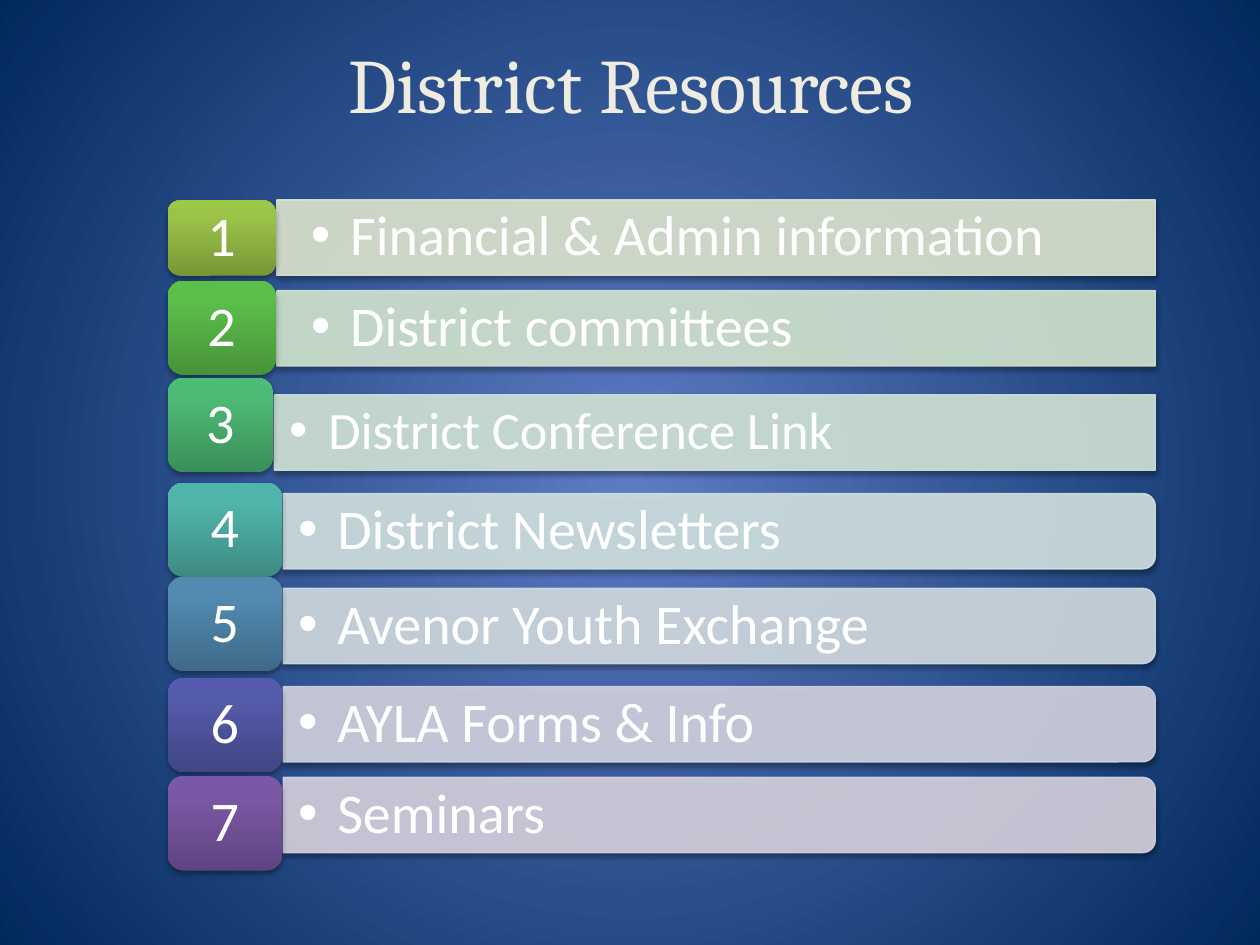
from copy import deepcopy

from lxml import etree
from pptx import Presentation
from pptx.dml.color import RGBColor as RGB
from pptx.enum.shapes import MSO_SHAPE as SHAPE
from pptx.enum.text import MSO_ANCHOR as ANCHOR, PP_ALIGN as ALIGN
from pptx.oxml.ns import qn
from pptx.util import Cm, Pt

COLORS = {
    "title": "EEECE1",
    "text": "FFFFFF",
    "shadow": "000000",
    "glow": "5E7CC5",
    "edge": "00295C",
    "bars": ["DEE7D1", "D3E6D2", "D2E5D9", "D2E3E2", "D2DCE2", "D3D4E1", "D8D3E0"],
    "tiles": [
        ("779737", "9BC348", "9DC746"),
        ("479339", "5CBF4A", "5BC249"),
        ("3B8F5A", "4DBA75", "4BBD75"),
        ("3D8B83", "50B5AA", "4EB8AC"),
        ("3F6A88", "528AB0", "518BB3"),
        ("414684", "555BAB", "545AAE"),
        ("5F4480", "7B58A6", "7C57A8"),
    ],
}


def add_text(shape, text, size=32, font="Calibri", color="text", align=ALIGN.CENTER,
             margins=(0.33, 0.18), spacing=0.9, bullet=False):
    tf = shape.text_frame
    tf.word_wrap = True
    tf.vertical_anchor = ANCHOR.MIDDLE
    tf.margin_left = tf.margin_right = Cm(margins[0])
    tf.margin_top = tf.margin_bottom = Cm(margins[1])
    p = tf.paragraphs[0]
    p.alignment = align
    p.line_spacing = spacing
    if bullet:
        p.level = 1
        pPr = p._p.get_or_add_pPr()
        pPr.set("marL", str(Cm(0.79)))
        pPr.set("indent", str(-Cm(0.79)))
        etree.SubElement(pPr, qn("a:buFont"), typeface="Arial")
        etree.SubElement(pPr, qn("a:buChar"), char="•")
    r = p.add_run()
    r.text = text
    r.font.size = Pt(size)
    r.font.name = font
    r.font.color.rgb = RGB.from_string(COLORS[color])


def set_stops(fill, stops):
    for stop, (position, color) in zip(fill.gradient_stops, stops):
        stop.position = position
        stop.color.rgb = RGB.from_string(color)


prs = Presentation()
prs.slide_width, prs.slide_height = Cm(25.4), Cm(19.05)
s = prs.slides.add_slide(prs.slide_layouts[6])

fill = s.background.fill
fill.gradient()
set_stops(fill, [(0, COLORS["glow"]), (1, COLORS["edge"])])
grad = s._element.find(".//" + qn("a:gradFill"))
grad.remove(grad.find(qn("a:lin")))
path_el = etree.SubElement(grad, qn("a:path"), {"path": "circle"})
etree.SubElement(path_el, qn("a:fillToRect"), l="50000", t="50000", r="50000", b="50000")

TILE_LEFT, BAR_RIGHT, BAR_HEIGHT = 3.38, 23.29, 1.52
RECT, ROUNDED = SHAPE.RECTANGLE, SHAPE.ROUND_2_SAME_RECTANGLE
rows = [
    ("Financial & Admin information", 4.79, 4.04, 2.18, 1.52, RECT, 32, (0.69, 0.33)),
    ("District committees", 6.62, 5.66, 2.18, 1.9, RECT, 32, (0.69, 0.33)),
    ("District Conference Link", 8.72, 7.62, 2.13, 1.9, RECT, 30, (0.3, 0.15)),
    ("District Newsletters", 10.71, 9.73, 2.31, 1.9, ROUNDED, 32, (0.3, 0.15)),
    ("Avenor Youth Exchange", 12.62, 11.63, 2.31, 1.9, ROUNDED, 32, (0.3, 0.15)),
    ("AYLA Forms & Info", 14.6, 13.67, 2.31, 1.9, ROUNDED, 32, (0.3, 0.15)),
    ("Seminars", 16.43, 15.65, 2.31, 1.9, ROUNDED, 32, (0.3, 0.15)),
]

for i, (label, mid, tile_top, tile_w, tile_h, kind, size, margins) in enumerate(rows):
    bar_left = TILE_LEFT + tile_w + 0.02
    bar_w = BAR_RIGHT - bar_left
    bar = s.shapes.add_shape(
        kind, Cm(bar_left + (bar_w - BAR_HEIGHT) / 2), Cm(mid - bar_w / 2),
        Cm(BAR_HEIGHT), Cm(bar_w))
    bar.rotation = 90
    bar.fill.solid()
    bar.fill.fore_color.rgb = bar.line.color.rgb = RGB.from_string(COLORS["bars"][i])
    bar.line.width = Pt(0.75)
    for color in bar._element.spPr.iter(qn("a:srgbClr")):
        etree.SubElement(color, qn("a:alpha"), val="90000")

    tb = s.shapes.add_textbox(
        Cm(bar_left), Cm(mid - BAR_HEIGHT / 2), Cm(bar_w), Cm(BAR_HEIGHT))
    add_text(tb, label, size=size, align=ALIGN.LEFT, margins=margins, bullet=True)

    tile = s.shapes.add_shape(
        SHAPE.ROUNDED_RECTANGLE, Cm(TILE_LEFT), Cm(tile_top), Cm(tile_w), Cm(tile_h))
    tile.line.fill.background()
    tile.fill.gradient()
    tile.fill.gradient_angle = 90
    stops = tile._element.spPr.find(".//" + qn("a:gsLst"))
    stops.append(deepcopy(stops[-1]))
    set_stops(tile.fill, zip((0, 0.8, 1), COLORS["tiles"][i]))
    add_text(tile, str(i + 1))

    for sp in (bar, tile):
        sp.shadow.inherit = False
        effects = sp._element.spPr.find(qn("a:effectLst"))
        shadow = etree.SubElement(
            effects, qn("a:outerShdw"), blurRad=str(Pt(3.1)), dist=str(Pt(1.8)),
            dir="5400000", rotWithShape="0")
        color = etree.SubElement(shadow, qn("a:srgbClr"), val=COLORS["shadow"])
        etree.SubElement(color, qn("a:alpha"), val="35000")

title = s.shapes.add_textbox(Cm(0.03), Cm(0.08), Cm(25.4), Cm(3.18))
add_text(title, "District Resources", size=44, font="Cambria", color="title",
         margins=(0.25, 0.13), spacing=1)

prs.save("out.pptx")
